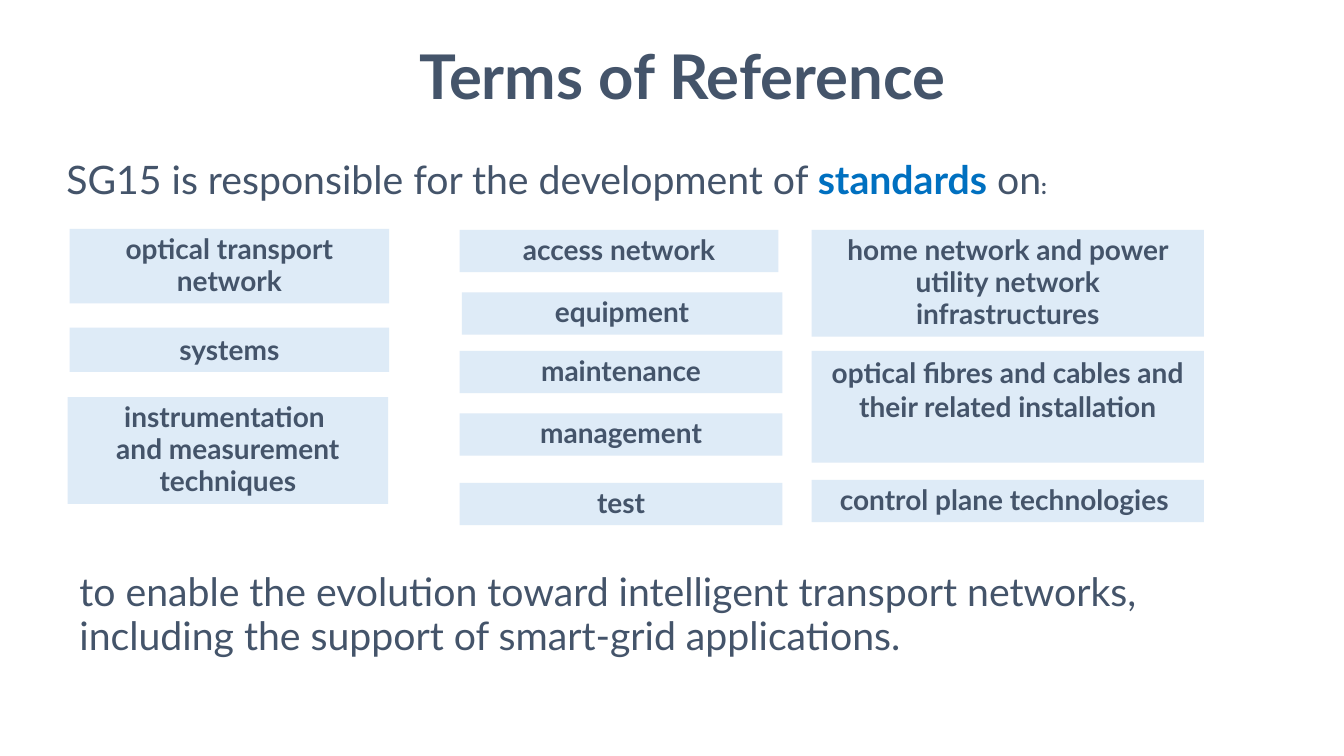
from dataclasses import dataclass

from pptx import Presentation
from pptx.dml.color import RGBColor
from pptx.enum.shapes import MSO_SHAPE
from pptx.enum.text import MSO_ANCHOR, MSO_AUTO_SIZE, PP_ALIGN
from pptx.util import Inches, Pt

RECT = MSO_SHAPE.RECTANGLE
TOP, MIDDLE = MSO_ANCHOR.TOP, MSO_ANCHOR.MIDDLE
LEFT, CENTER = PP_ALIGN.LEFT, PP_ALIGN.CENTER
NO_FIT = MSO_AUTO_SIZE.NONE


@dataclass(frozen=True)
class Theme:
    font: str = "Lato"
    text: RGBColor = RGBColor(0x44, 0x54, 0x6A)
    accent: RGBColor = RGBColor(0x00, 0x70, 0xC0)
    box: RGBColor = RGBColor(0xDE, 0xEB, 0xF7)
    title_size: int = 44
    body_size: int = 28
    box_size: int = 20
    colon_size: int = 16
    line_spacing: float = 0.95
    space_before: int = 5


THEME = Theme()

# Content: boxes are (left, top, width, height), in inches
TITLE = ("Terms of Reference", (1.04, 0.35, 11.46, 0.79))
INTRO_BOX = (0.56, 1.53, 12.1, 0.55)
INTRO_RUNS = [
    # text, colour, bold, size
    ("SG15 is responsible for the development of ", THEME.text, False, THEME.body_size),
    ("standards", THEME.accent, True, THEME.body_size),
    (" on", THEME.text, False, THEME.body_size),
    (":", THEME.text, True, THEME.colon_size),
]
OUTRO = (
    "to enable the evolution toward intelligent transport networks, "
    "including the support of smart-grid applications.",
    (0.69, 5.61, 12.1, 1.0),
)
TOPICS = [
    ("optical transport network", (0.69, 2.27, 3.17, 0.74)),
    ("systems", (0.69, 3.25, 3.17, 0.44)),
    ("instrumentation \nand measurement techniques", (0.67, 3.94, 3.18, 1.06)),
    ("access network", (4.56, 2.28, 3.16, 0.42)),
    ("equipment", (4.58, 2.9, 3.18, 0.42)),
    ("maintenance", (4.56, 3.48, 3.2, 0.42)),
    ("management", (4.56, 4.1, 3.2, 0.42)),
    ("test", (4.56, 4.79, 3.2, 0.42)),
    ("home network and power utility network infrastructures", (8.05, 2.28, 3.89, 1.06)),
    ("optical fibres and cables and their related installation", (8.05, 3.48, 3.89, 1.11)),
    ("control plane technologies ", (8.05, 4.76, 3.89, 0.42)),
]
SINGLE_SPACED = {TOPICS[1][0], TOPICS[9][0]}


def inches(box):
    return [Inches(v) for v in box]


def format_text(sp, size, bold=False, align=LEFT, anchor=TOP, tight=True):
    """Format the only paragraph of a shape and return it."""
    tf = sp.text_frame
    tf.word_wrap = True
    tf.auto_size = NO_FIT
    tf.vertical_anchor = anchor
    p = tf.paragraphs[0]
    p.alignment = align
    p.font.name = THEME.font
    p.font.size = Pt(size)
    p.font.bold = bold
    p.font.color.rgb = THEME.text
    if tight:
        p.line_spacing = THEME.line_spacing
        p.space_before = Pt(THEME.space_before)
    return p


def add_title(s):
    text, box = TITLE
    sp = s.shapes.title
    sp.left, sp.top, sp.width, sp.height = inches(box)
    tf = sp.text_frame
    tf.margin_left = tf.margin_right = Inches(0.05)
    tf.margin_top = tf.margin_bottom = Inches(0.02)
    format_text(sp, THEME.title_size, True, CENTER, MIDDLE, tight=False).text = text


def add_intro(s):
    sp = s.shapes.add_textbox(*inches(INTRO_BOX))
    p = format_text(sp, THEME.body_size)
    for text, color, bold, size in INTRO_RUNS:
        r = p.add_run()
        r.text = text
        r.font.color.rgb = color
        r.font.bold = bold
        r.font.size = Pt(size)


def add_topic(s, text, box):
    sp = s.shapes.add_shape(RECT, *inches(box))
    sp.shadow.inherit = False
    sp.fill.solid()
    sp.fill.fore_color.rgb = THEME.box
    sp.line.fill.background()
    tight = text not in SINGLE_SPACED
    format_text(sp, THEME.box_size, True, CENTER, tight=tight).text = text


def add_outro(s):
    text, box = OUTRO
    sp = s.shapes.add_textbox(*inches(box))
    format_text(sp, THEME.body_size).text = text


def main():
    prs = Presentation()
    prs.slide_width, prs.slide_height = Inches(13.33), Inches(7.5)
    s = prs.slides.add_slide(prs.slide_layouts[5])

    # Title and opening line
    add_title(s)
    add_intro(s)

    # Topic boxes
    for text, box in TOPICS:
        add_topic(s, text, box)

    # Closing line
    add_outro(s)
    prs.save("out.pptx")


if __name__ == "__main__":
    main()
